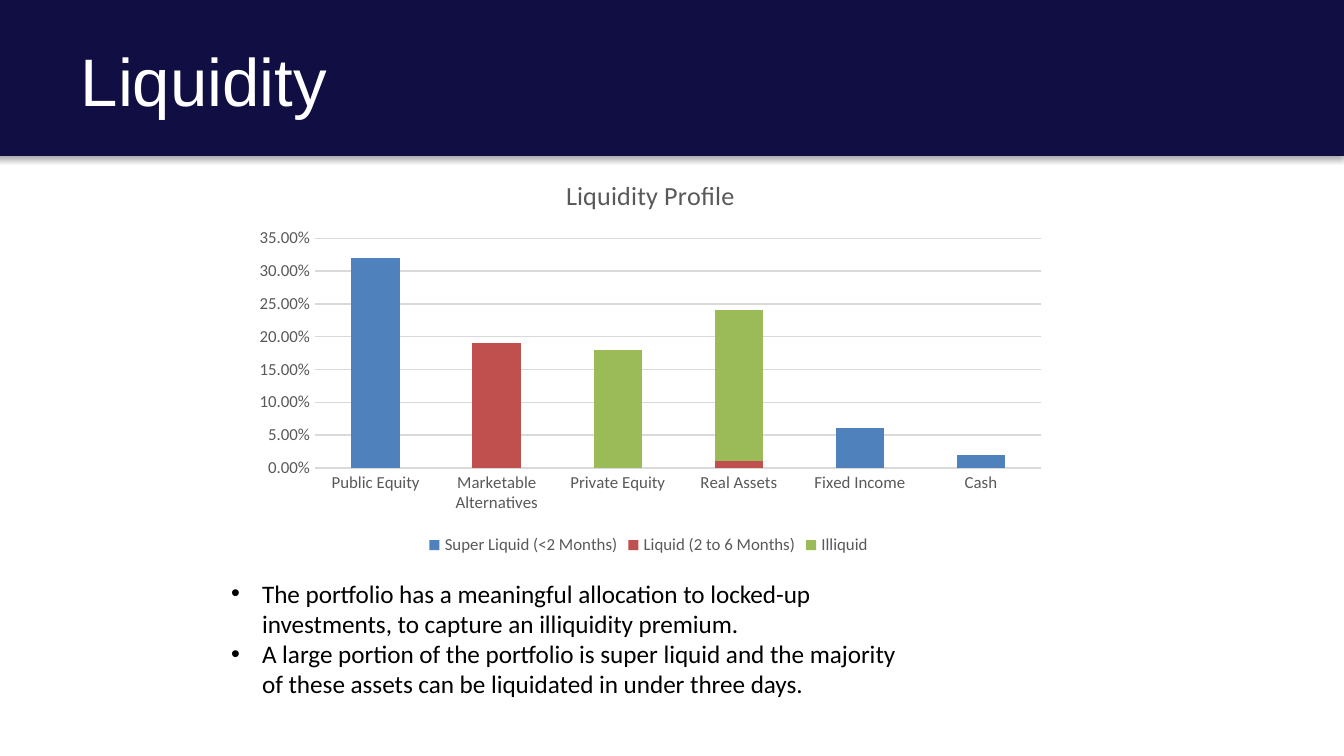
from lxml import etree
from pptx import Presentation
from pptx import util as u
from pptx.chart import data
from pptx.dml import color
from pptx.enum import chart as ch, shapes, text
from pptx.oxml import ns

INK = {
    "navy": "100E42", "white": "FFFFFF", "black": "000000",
    "gray": "595959", "grid": "D9D9D9",
    "blue": "4F81BD", "red": "C0504D", "green": "9BBB59",
}


def rgb(name):
    return color.RGBColor.from_string(INK[name])


def write(frame, lines, size, tint, font="Calibri", space=None, indent=0):
    """Fill a text frame with one paragraph per line."""
    for i, line in enumerate(lines):
        para = frame.paragraphs[0] if i == 0 else frame.add_paragraph()
        para.alignment = text.PP_ALIGN.LEFT
        para.space_before = u.Pt(0)
        para.line_spacing = space
        if indent:
            props = para._p.get_or_add_pPr()
            props.set("marL", str(u.Inches(indent)))
            props.set("indent", str(u.Inches(-indent)))
        run = para.add_run()
        run.text = line
        run.font.name, run.font.size = font, u.Pt(size)
        run.font.color.rgb = rgb(tint)


# A 16:9 slide
deck = Presentation()
deck.slide_width, deck.slide_height = u.Inches(10), u.Inches(10 * 9 / 16)
slide = deck.slides.add_slide(deck.slide_layouts[1])
title, body = slide.shapes.title, slide.placeholders[1]

# Header band with a soft shadow, behind the title
band = slide.shapes.add_shape(
    shapes.MSO_SHAPE.RECTANGLE,
    u.Inches(-0.04), u.Inches(0), u.Inches(10.04), u.Inches(1.16))
band.fill.solid()
band.fill.fore_color.rgb = rgb("navy")
band.line.fill.background()
band.shadow.inherit = False
glow = etree.SubElement(
    band.element.spPr.find(ns.qn("a:effectLst")), ns.qn("a:outerShdw"),
    blurRad=str(u.Pt(3.1)), dist=str(u.Pt(1.8)), dir="5400000", rotWithShape="0")
tone = etree.SubElement(glow, ns.qn("a:srgbClr"), val=INK["black"])
etree.SubElement(tone, ns.qn("a:alpha"), val="35000")
title.element.addprevious(band.element)

# Title
title.left, title.top = u.Inches(0.5), u.Inches(0.31)
title.width, title.height = u.Inches(9), u.Inches(0.85)
frame = title.text_frame
frame.auto_size = text.MSO_AUTO_SIZE.NONE
frame.vertical_anchor = text.MSO_ANCHOR.TOP
frame.margin_top = u.Inches(0.05)
write(frame, ["Liquidity"], 36, "white", font="Arial", space=0.9)

# Stacked column chart
stock = data.CategoryChartData(number_format="0.00%")
stock.categories = ["Public Equity", "Marketable Alternatives", "Private Equity",
                    "Real Assets", "Fixed Income", "Cash"]
rows = [
    ("Super Liquid (<2 Months)", "blue", [0.32, 0, 0, 0, 0.06, 0.02]),
    ("Liquid (2 to 6 Months)", "red", [0, 0.19, 0, 0.01, 0, 0]),
    ("Illiquid ", "green", [0, 0, 0.18, 0.23, 0, 0]),
]
for name, tint, vals in rows:
    stock.add_series(name, vals)
chart = slide.shapes.add_chart(
    ch.XL_CHART_TYPE.COLUMN_STACKED,
    u.Inches(1.81), u.Inches(1.17), u.Inches(6.06), u.Inches(3), stock).chart
chart.font.name, chart.font.size = "Calibri", u.Pt(10)
chart.font.color.rgb = rgb("black")

plot = chart.plots[0]
plot.gap_width, plot.overlap = 150, 100
plot.vary_by_categories = False
for series, (name, tint, vals) in zip(plot.series, rows):
    series.format.fill.solid()
    series.format.fill.fore_color.rgb = rgb(tint)

# Chart title and legend
chart.has_title = True
chart.chart_title.include_in_layout = False
head = chart.chart_title.text_frame
head.text = "Liquidity Profile"
font = head.paragraphs[0].runs[0].font
font.name, font.size, font.bold = "Calibri", u.Pt(14), False
font.color.rgb = rgb("gray")
chart.has_legend = True
chart.legend.position = ch.XL_LEGEND_POSITION.BOTTOM
chart.legend.include_in_layout = False

# Axes
cats, vals = chart.category_axis, chart.value_axis
for part in (cats.tick_labels, vals.tick_labels, chart.legend):
    part.font.name, part.font.size = "Calibri", u.Pt(9)
    part.font.color.rgb = rgb("gray")
for axis in (cats, vals):
    axis.major_tick_mark = axis.minor_tick_mark = ch.XL_TICK_MARK.NONE
vals.minimum_scale, vals.maximum_scale, vals.major_unit = 0, 0.35, 0.05
vals.tick_labels.number_format = "0.00%"
vals.tick_labels.number_format_is_linked = False
vals.format.line.fill.background()
for line in (cats.format.line, vals.major_gridlines.format.line):
    line.color.rgb = rgb("grid")
    line.width = u.Pt(0.75)

# Bullet list
body.left, body.top = u.Inches(1.62), u.Inches(4.25)
body.width, body.height = u.Inches(5.19), u.Inches(1.01)
body.text_frame.auto_size = text.MSO_AUTO_SIZE.SHAPE_TO_FIT_TEXT
write(body.text_frame, [
    "The portfolio has a meaningful allocation to locked-up investments, "
    "to capture an illiquidity premium.",
    "A large portion of the portfolio is super liquid and the majority "
    "of these assets can be liquidated in under three days.",
], 13.5, "black", indent=0.23)

deck.save("out.pptx")
